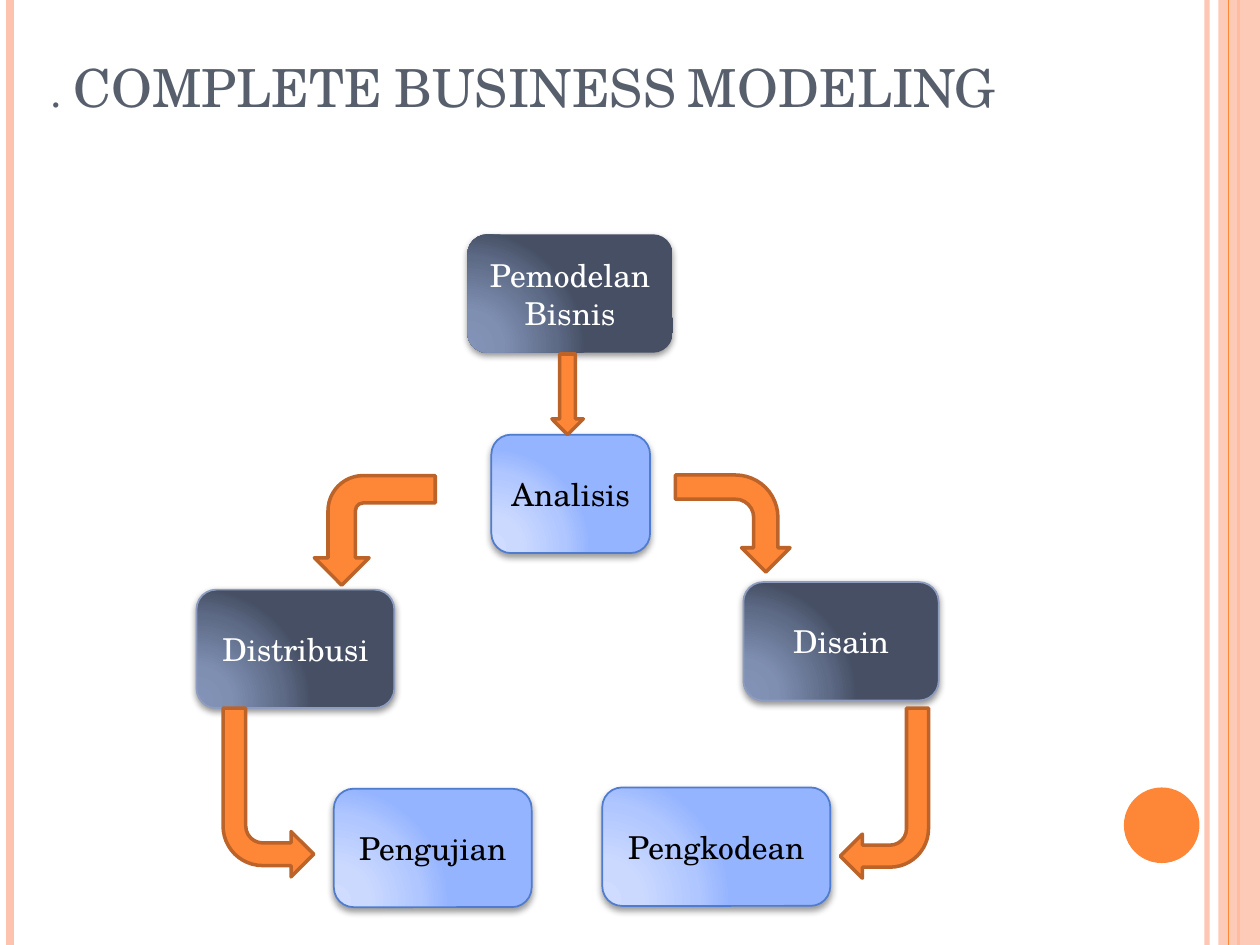
"""Build the business modeling flow slide."""
from dataclasses import dataclass

from lxml import etree
from pptx import Presentation
from pptx import util as u
from pptx.dml.color import RGBColor
from pptx.enum import shapes, text
from pptx.oxml.ns import qn

FONT = "TeX Gyre Schola"
COLORS = {
    "title": "575F6D", "orange": "FE8637", "peach": "FEC3AE",
    "arrow_line": "BC6329", "white": "FFFFFF", "black": "000000",
    "dark_line": "8D9CBF", "light_line": "4F7CCF",
}
STOPS = (0, 30, 75, 100)


@dataclass(frozen=True)
class BoxStyle:
    gradient: tuple[str, ...]
    font: str
    line: str
    shadow_alpha: int
    shadow_distance: float


@dataclass(frozen=True)
class Box:
    label: str
    left: float
    top: float
    width: float
    style: BoxStyle
    outlined: bool = True


@dataclass(frozen=True)
class Arrow:
    kind: shapes.MSO_SHAPE
    left: float
    top: float
    width: float
    height: float
    rotation: int = 0
    flips: str = ""
    bend: float | None = None


@dataclass(frozen=True)
class Rule:
    x: float
    color: str
    weight: float
    alpha: int = 100


DARK = BoxStyle(("8494B9", "7F8FB2", "5E6B87", "464F64"), "white", "dark_line", 42, 1.6)
LIGHT = BoxStyle(("CFDCFF", "CBD9FF", "AFC6FF", "95B4FF"), "black", "light_line", 40, 2)
BOX_HEIGHT = 0.94

RULES = (
    Rule(9.58, "peach", 3, 93),
    Rule(0.08, "peach", 4.5),
    Rule(9.83, "orange", 1.5),
)
BOXES = (
    Box("Pemodelan Bisnis", 3.71, 1.86, 1.63, DARK, False),
    Box("Analisis", 3.9, 3.45, 1.26, LIGHT),
    Box("Distribusi", 1.56, 4.68, 1.57, DARK),
    Box("Disain", 5.9, 4.62, 1.55, DARK),
    Box("Pengujian", 2.65, 6.26, 1.57, LIGHT),
    Box("Pengkodean", 4.78, 6.25, 1.81, LIGHT),
)
BENT = shapes.MSO_SHAPE.BENT_ARROW
ARROWS = (
    Arrow(shapes.MSO_SHAPE.DOWN_ARROW, 4.38, 2.81, 0.25, 0.64),
    Arrow(BENT, 5.43, 3.7, 0.77, 0.91, rotation=90),
    Arrow(BENT, 2.54, 3.73, 0.87, 0.96, rotation=90, flips="V", bend=0.32),
    Arrow(BENT, 6.67, 5.62, 0.7, 1.35, flips="HV"),
    Arrow(BENT, 1.77, 5.62, 0.72, 1.34, flips="V"),
)


def rgb(name: str) -> RGBColor:
    """Look up a named color."""
    return RGBColor.from_string(COLORS[name])


def add_child(parent, tag: str, **attributes):
    """Append a DrawingML element with the given attributes."""
    values = {key: str(value) for key, value in attributes.items()}
    return etree.SubElement(parent, qn(tag), values)


def set_alpha(shape, percent: int) -> None:
    """Make the first solid color of a shape partly transparent."""
    color = next(shape._element.spPr.iter(qn("a:srgbClr")))
    add_child(color, "a:alpha", val=percent * 1000)


def add_rule(slide, rule: Rule) -> None:
    """Draw a full-height vertical line."""
    x = u.Inches(rule.x)
    line = slide.shapes.add_connector(shapes.MSO_CONNECTOR.STRAIGHT, x, 0, x, u.Inches(7.5))
    line.line.color.rgb = rgb(rule.color)
    line.line.width = u.Pt(rule.weight)
    if rule.alpha < 100:
        set_alpha(line, rule.alpha)
    add_child(line._element.spPr, "a:effectLst")


def add_plain_shape(slide, kind, left: float, top: float, width: float, height: float, color: str):
    """Draw a solid shape without outline or shadow."""
    shape = slide.shapes.add_shape(kind, *map(u.Inches, (left, top, width, height)))
    shape.fill.solid()
    shape.fill.fore_color.rgb = rgb(color)
    shape.line.fill.background()
    shape.shadow.inherit = False
    return shape


def apply_gradient(shape, colors: tuple[str, ...]) -> None:
    """Fill a shape with a circular gradient from its lower left."""
    shape.fill.gradient()
    gradient = shape._element.spPr.find(qn("a:gradFill"))
    for child in list(gradient):
        gradient.remove(child)
    stops = add_child(gradient, "a:gsLst")
    for position, color in zip(STOPS, colors):
        stop = add_child(stops, "a:gs", pos=position * 1000)
        add_child(stop, "a:srgbClr", val=color)
    circle = add_child(gradient, "a:path", path="circle")
    add_child(circle, "a:fillToRect", l=5000, t=100000, r=120000, b=10000)


def apply_shadow(shape, style: BoxStyle) -> None:
    """Give a shape a soft shadow below it."""
    effects = shape._element.spPr.find(qn("a:effectLst"))
    shadow = add_child(effects, "a:outerShdw", blurRad=u.Pt(4), dist=u.Pt(style.shadow_distance),
                       dir=5400000, rotWithShape=0)
    color = add_child(shadow, "a:srgbClr", val=COLORS["black"])
    add_child(color, "a:alpha", val=style.shadow_alpha * 1000)


def format_text(paragraph, size: float, color: str) -> None:
    """Format every run of a paragraph."""
    for run in paragraph.runs:
        run.font.name = FONT
        run.font.size = u.Pt(size)
        run.font.color.rgb = rgb(color)


def add_box(slide, box: Box) -> None:
    """Draw a labelled process box."""
    style = box.style
    shape = add_plain_shape(slide, shapes.MSO_SHAPE.ROUNDED_RECTANGLE,
                            box.left, box.top, box.width, BOX_HEIGHT, "white")
    apply_gradient(shape, style.gradient)
    if box.outlined:
        shape.line.color.rgb = rgb(style.line)
        shape.line.width = u.Pt(1)
    apply_shadow(shape, style)
    frame = shape.text_frame
    frame.text = box.label
    frame.word_wrap = True
    frame.vertical_anchor = text.MSO_ANCHOR.MIDDLE
    paragraph = frame.paragraphs[0]
    paragraph.alignment = text.PP_ALIGN.CENTER
    format_text(paragraph, 18, style.font)


def add_arrow(slide, arrow: Arrow) -> None:
    """Draw an outlined block arrow."""
    shape = add_plain_shape(slide, arrow.kind, arrow.left, arrow.top,
                            arrow.width, arrow.height, "orange")
    shape.line.color.rgb = rgb("arrow_line")
    shape.line.width = u.Pt(2)
    shape.rotation = arrow.rotation
    for axis in arrow.flips:
        shape._element.spPr.xfrm.set(f"flip{axis}", "1")
    if arrow.bend is not None:
        shape.adjustments[3] = arrow.bend


def set_title(slide, title: str) -> None:
    """Place and format the slide title."""
    shape = slide.shapes.title
    shape.left, shape.top, shape.width, shape.height = map(u.Inches, (0.3, 0.13, 8.17, 0.86))
    frame = shape.text_frame
    frame.text = title
    frame.auto_size = text.MSO_AUTO_SIZE.NONE
    frame.vertical_anchor = text.MSO_ANCHOR.BOTTOM
    paragraph = frame.paragraphs[0]
    paragraph.alignment = text.PP_ALIGN.LEFT
    format_text(paragraph, 30, "title")
    paragraph.runs[0].font._element.set("cap", "small")


def main() -> None:
    """Build and save the presentation."""
    presentation = Presentation()
    presentation.slide_width, presentation.slide_height = u.Inches(10), u.Inches(7.5)
    slide = presentation.slides.add_slide(presentation.slide_layouts[5])
    for rule in RULES:
        add_rule(slide, rule)
    band = add_plain_shape(slide, shapes.MSO_SHAPE.RECTANGLE, 9.67, 0, 0.33, 7.5, "peach")
    set_alpha(band, 87)
    add_rule(slide, Rule(9.75, "orange", 0.75))
    add_plain_shape(slide, shapes.MSO_SHAPE.OVAL, 8.92, 6.25, 0.6, 0.6, "orange")
    set_title(slide, ". COMPLETE BUSINESS MODELING")
    for box in BOXES:
        add_box(slide, box)
    for arrow in ARROWS:
        add_arrow(slide, arrow)
    presentation.save("out.pptx")


if __name__ == "__main__":
    main()
